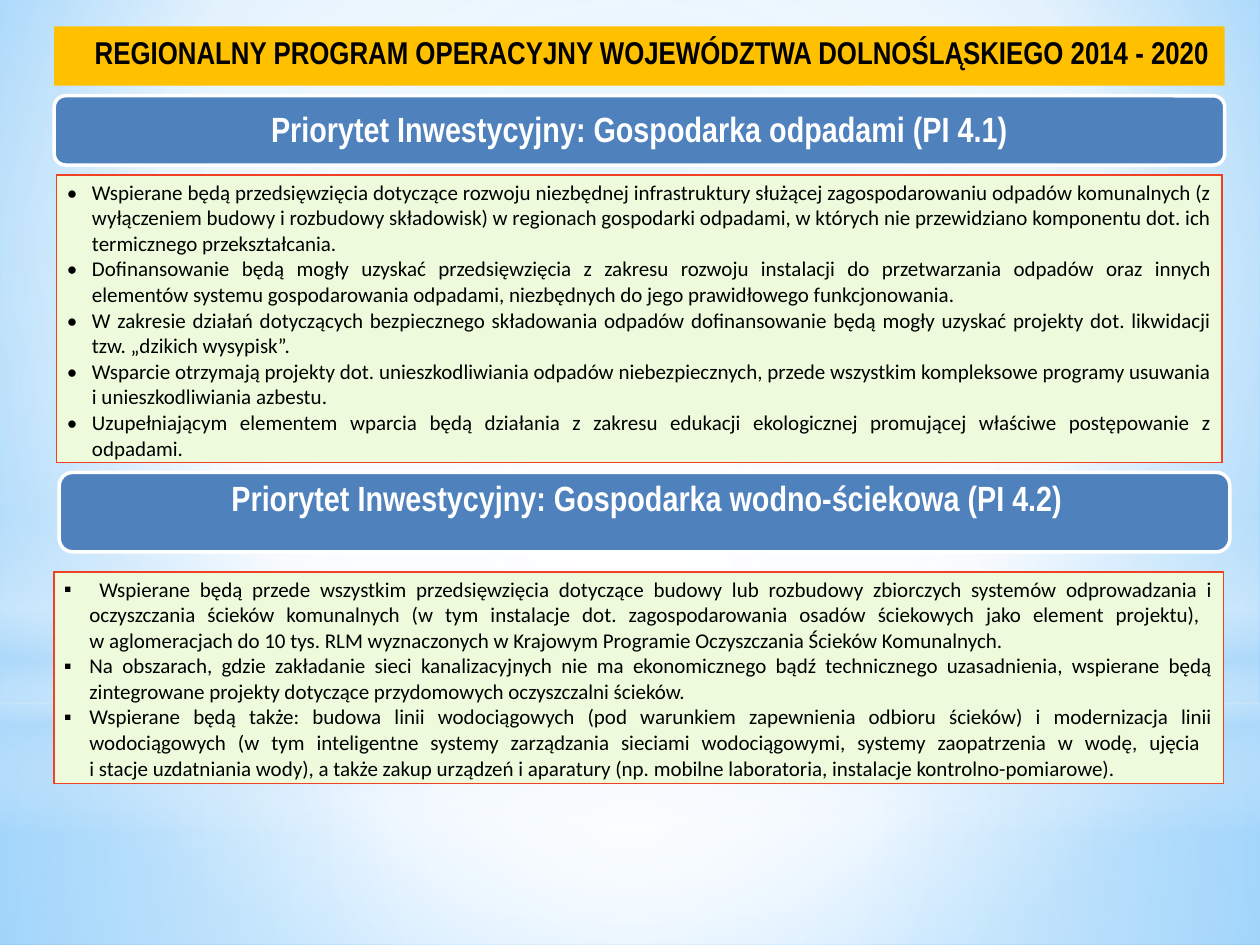
import pptx
import pptx.util
import pptx.dml.color
import pptx.enum.shapes
import pptx.enum.text
import pptx.oxml
import pptx.oxml.ns

Inches, Pt = pptx.util.Inches, pptx.util.Pt
qn = pptx.oxml.ns.qn
SHAPE = pptx.enum.shapes.MSO_SHAPE
ANCHOR = pptx.enum.text.MSO_ANCHOR
ALIGN = pptx.enum.text.PP_ALIGN
NS = pptx.oxml.ns.nsdecls("a")

# Content
TITLE = "REGIONALNY PROGRAM OPERACYJNY WOJEWÓDZTWA DOLNOŚLĄSKIEGO 2014 - 2020"
TITLE_BOX = (0.43, 0.21, 9.29, 0.47)

HEADINGS = [  # text, bar box, text box
    ("Priorytet Inwestycyjny: Gospodarka odpadami (PI 4.1)",
     (0.43, 0.76, 9.29, 0.55), (0.45, 0.78, 9.25, 0.52)),
    ("Priorytet Inwestycyjny: Gospodarka wodno-ściekowa (PI 4.2)",
     (0.47, 3.75, 9.29, 0.63), (0.51, 3.67, 9.25, 0.6)),
]

TABLES = [  # box, bullet, paragraphs
    ((0.45, 1.39, 9.25, 2.28), "•", [
        "Wspierane będą przedsięwzięcia dotyczące rozwoju niezbędnej infrastruktury służącej zagospodarowaniu odpadów komunalnych (z wyłączeniem budowy i rozbudowy składowisk) w regionach gospodarki odpadami, w których nie przewidziano komponentu dot. ich termicznego przekształcania.",
        "Dofinansowanie będą mogły uzyskać przedsięwzięcia z zakresu rozwoju instalacji do przetwarzania odpadów oraz innych elementów systemu gospodarowania odpadami, niezbędnych do jego prawidłowego funkcjonowania.",
        "W zakresie działań dotyczących bezpiecznego składowania odpadów dofinansowanie będą mogły uzyskać projekty dot. likwidacji tzw. „dzikich wysypisk”.",
        "Wsparcie otrzymają projekty dot. unieszkodliwiania odpadów niebezpiecznych, przede wszystkim kompleksowe programy usuwania i unieszkodliwiania azbestu.",
        "Uzupełniającym elementem wparcia będą działania z zakresu edukacji ekologicznej promującej właściwe postępowanie z odpadami.",
    ]),
    ((0.43, 4.54, 9.28, 1.68), "▪", [
        " Wspierane będą przede wszystkim przedsięwzięcia dotyczące budowy lub rozbudowy zbiorczych systemów odprowadzania i oczyszczania ścieków komunalnych (w tym instalacje dot. zagospodarowania osadów ściekowych jako element projektu), \nw aglomeracjach do 10 tys. RLM wyznaczonych w Krajowym Programie Oczyszczania Ścieków Komunalnych.",
        "Na obszarach, gdzie zakładanie sieci kanalizacyjnych nie ma ekonomicznego bądź technicznego uzasadnienia, wspierane będą zintegrowane projekty dotyczące przydomowych oczyszczalni ścieków.",
        "Wspierane będą także: budowa linii wodociągowych (pod warunkiem zapewnienia odbioru ścieków) i modernizacja linii wodociągowych (w tym inteligentne systemy zarządzania sieciami wodociągowymi, systemy zaopatrzenia w wodę, ujęcia \ni stacje uzdatniania wody), a także zakup urządzeń i aparatury (np. mobilne laboratoria, instalacje kontrolno-pomiarowe).",
    ]),
]

# Gradients: stops are (position %, colour, opacity %)
CENTRE = (50, 50, 50, 50)
BACKGROUND = [(0, "9ED5FF", 100), (60, "FFFFFF", 100), (100, "5BB9FF", 100)]
GLOWS = [  # shape, box, stops, focus (None = vertical linear)
    (SHAPE.RECTANGLE, (0, 5.58, 10, 1.92),
     [(0, "FFFFFF", 91), (37, "FFFFFF", 76), (100, "B4DCFA", 79)], CENTRE),
    (SHAPE.RECTANGLE, (0, 0, 10, 5.58),
     [(0, "FFFFFF", 89), (48, "FFFFFF", 62), (100, "B4DCFA", 79)], CENTRE),
    (SHAPE.RECTANGLE, (0, 4.12, 10, 2.5),
     [(0, "FFFFFF", 0), (29, "FFFFFF", 30), (45, "B4DCFA", 40),
      (55, "FFFFFF", 26), (65, "B4DCFA", 60), (100, "FFFFFF", 0)], None),
    (SHAPE.OVAL, (0, 1.75, 10, 5.58),
     [(0, "FFFFFF", 100), (56, "FFFFFF", 0)], CENTRE),
]

# Text formats
TITLE_FONT = {"name": "Arial Narrow", "size": Pt(18), "bold": True}
HEADING_FONT = {"name": "Arial Narrow", "size": Pt(20), "bold": True}
BODY_FONT = {"name": "Calibri", "size": Pt(12), "bold": False}


def rgb(value):
    return pptx.dml.color.RGBColor.from_string(value)


def inches(box):
    return [Inches(v) for v in box]


def set_gradient(parent, stops, focus):
    """Replace the solid fill inside parent with a gradient."""
    gs = "".join(
        f'<a:gs pos="{pos * 1000}"><a:srgbClr val="{color}">'
        f'<a:alpha val="{alpha * 1000}"/></a:srgbClr></a:gs>'
        for pos, color, alpha in stops)
    if focus:
        edges = " ".join(f'{k}="{v * 1000}"' for k, v in zip("ltrb", focus))
        shade = f'<a:path path="circle"><a:fillToRect {edges}/></a:path>'
    else:
        shade = '<a:lin ang="5400000" scaled="0"/>'
    grad = pptx.oxml.parse_xml(
        f'<a:gradFill {NS} rotWithShape="1"><a:gsLst>{gs}</a:gsLst>{shade}</a:gradFill>')
    parent.replace(parent.find(qn("a:solidFill")), grad)


def add_box(s, kind, box, fill, line=None):
    sp = s.shapes.add_shape(kind, *inches(box))
    sp.shadow.inherit = False
    sp.fill.solid()
    sp.fill.fore_color.rgb = rgb(fill)
    if line:
        sp.line.color.rgb = rgb(line)
        sp.line.width = Pt(2)
    else:
        sp.line.fill.background()
    return sp


def write(p, text, font, color, align):
    p.text = text
    p.alignment = align
    for r in p.runs:
        for name, value in font.items():
            setattr(r.font, name, value)
        r.font.color.rgb = rgb(color)
    for br in p._p.findall(qn("a:br")):
        size = int(font["size"].pt * 100)
        br.append(pptx.oxml.parse_xml(f'<a:rPr {NS} sz="{size}"/>'))


def add_bullet(p, char):
    pPr = p._p.get_or_add_pPr()
    pPr.set("marL", str(Inches(0.2)))
    pPr.set("indent", str(-Inches(0.2)))
    pPr.append(pptx.oxml.parse_xml(f'<a:buFont {NS} typeface="Calibri"/>'))
    pPr.append(pptx.oxml.parse_xml(f'<a:buChar {NS} char="{char}"/>'))


def add_text_table(s, box, bullet, paragraphs):
    table = s.shapes.add_table(1, 1, *inches(box)).table
    table.first_row = table.horz_banding = False
    cell = table.cell(0, 0)
    cell.margin_left = cell.margin_right = Inches(0.08)
    cell.margin_top = cell.margin_bottom = Inches(0.04)
    tcPr = cell._tc.get_or_add_tcPr()
    for side in "LRTB":
        tcPr.append(pptx.oxml.parse_xml(
            f'<a:ln{side} {NS} w="{Pt(1)}"><a:solidFill>'
            f'<a:srgbClr val="F14124"/></a:solidFill></a:ln{side}>'))
    cell.fill.solid()
    cell.fill.fore_color.rgb = rgb("EDFBDC")
    tf = cell.text_frame
    for i, text in enumerate(paragraphs):
        p = tf.add_paragraph() if i else tf.paragraphs[0]
        add_bullet(p, bullet)
        write(p, text, BODY_FONT, "000000", ALIGN.JUSTIFY)


prs = pptx.Presentation()
prs.slide_width, prs.slide_height = Inches(10), Inches(7.5)
s = prs.slides.add_slide(prs.slide_layouts[6])

# Background and soft glows
fill = s.background.fill
fill.solid()
fill.fore_color.rgb = rgb("FFFFFF")
set_gradient(s._element.find(".//" + qn("p:bgPr")), BACKGROUND, (20, 10, 20, 60))
for kind, box, stops, focus in GLOWS:
    sp = add_box(s, kind, box, "FFFFFF")
    set_gradient(sp._element.spPr, stops, focus)

# Title bar
sp = add_box(s, SHAPE.RECTANGLE, TITLE_BOX, "FFC000")
tf = sp.text_frame
tf.word_wrap = True
tf.vertical_anchor = ANCHOR.TOP
p = tf.paragraphs[0]
write(p, TITLE, TITLE_FONT, "000000", ALIGN.CENTER)
p._p.get_or_add_pPr().set("marL", str(Inches(0.2)))

# Priority headings, each followed by its table
for (heading, bar, label), table in zip(HEADINGS, TABLES):
    add_box(s, SHAPE.ROUNDED_RECTANGLE, bar, "4F81BD", "FFFFFF")
    tf = s.shapes.add_textbox(*inches(label)).text_frame
    tf.word_wrap = True
    tf.vertical_anchor = ANCHOR.MIDDLE
    tf.margin_left = tf.margin_right = Inches(0.26)
    tf.margin_top = tf.margin_bottom = 0
    p = tf.paragraphs[0]
    write(p, heading, HEADING_FONT, "FFFFFF", ALIGN.CENTER)
    p.line_spacing = 0.9
    add_text_table(s, *table)

prs.save("out.pptx")
